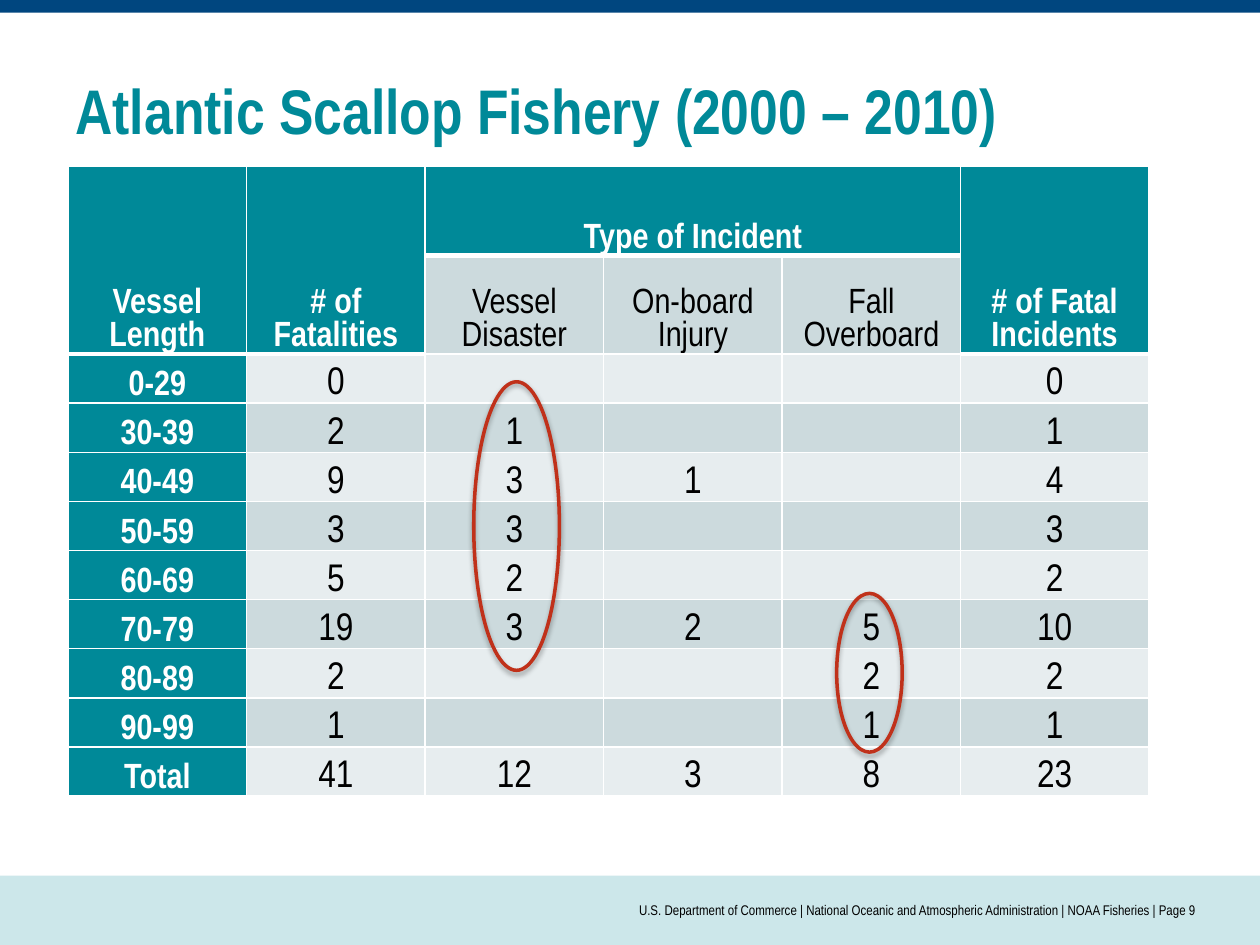
from lxml.etree import SubElement
from pptx import Presentation
from pptx.dml.color import RGBColor
from pptx.enum.shapes import MSO_SHAPE
from pptx.enum.text import MSO_ANCHOR, MSO_AUTO_SIZE, PP_ALIGN
from pptx.oxml.ns import qn
from pptx.util import Inches, Pt

COLORS = {
    "teal": "008998",
    "navy": "00467F",
    "footer": "CCE7EA",
    "dark_band": "CCDADD",
    "light_band": "E7EDEF",
    "white": "FFFFFF",
    "black": "000000",
    "red": "C0311A",
}
FONT = "Arial Narrow"
GRID_COLUMNS, GRID_ROWS = 100, 75

HEADERS = [
    ["Vessel Length", "# of Fatalities", "Type of Incident", "", "", "# of Fatal Incidents"],
    ["", "", "Vessel Disaster", "On-board Injury", "Fall Overboard", ""],
]
RECORDS = [
    ["0-29", "0", "", "", "", "0"],
    ["30-39", "2", "1", "", "", "1"],
    ["40-49", "9", "3", "1", "", "4"],
    ["50-59", "3", "3", "", "", "3"],
    ["60-69", "5", "2", "", "", "2"],
    ["70-79", "19", "3", "2", "5", "10"],
    ["80-89", "2", "", "", "2", "2"],
    ["90-99", "1", "", "", "1", "1"],
    ["Total", "41", "12", "3", "8", "23"],
]
TALL_HEADERS = (0, 1, 5)
FOOTER = " | ".join([
    "U.S. Department of Commerce",
    "National Oceanic and Atmospheric Administration",
    "NOAA Fisheries",
    "Page 9",
])


def color(name):
    return RGBColor.from_string(COLORS[name])


class SlideBuilder:
    def __init__(self, presentation):
        self.column = presentation.slide_width / GRID_COLUMNS
        self.row = presentation.slide_height / GRID_ROWS
        self.slide = presentation.slides.add_slide(presentation.slide_layouts[5])

    def area(self, left, top, width, height):
        return (round(left * self.column), round(top * self.row),
                round(width * self.column), round(height * self.row))

    def set_text(self, text_frame, text, size, color_name, bold=False, align=PP_ALIGN.LEFT):
        text_frame.text = text
        text_frame.word_wrap = True
        for paragraph in text_frame.paragraphs:
            paragraph.alignment = align
            for run in paragraph.runs:
                run.font.name = FONT
                run.font.size = Pt(size)
                run.font.bold = bold
                run.font.color.rgb = color(color_name)

    def title(self, text, *area):
        title = self.slide.shapes.title
        title.left, title.top, title.width, title.height = self.area(*area)
        self.set_text(title.text_frame, text, 36, "teal", bold=True)
        title.text_frame.vertical_anchor = MSO_ANCHOR.MIDDLE
        title.text_frame.auto_size = MSO_AUTO_SIZE.NONE

    def bar(self, fill, *area):
        bar = self.slide.shapes.add_shape(MSO_SHAPE.RECTANGLE, *self.area(*area))
        bar.shadow.inherit = False
        bar.fill.solid()
        bar.fill.fore_color.rgb = color(fill)
        bar.line.fill.background()

    def footer(self, text, *area):
        text_frame = self.slide.shapes.add_textbox(*self.area(*area)).text_frame
        self.set_text(text_frame, text, 8, "black", align=PP_ALIGN.RIGHT)
        text_frame.vertical_anchor = MSO_ANCHOR.MIDDLE
        text_frame.margin_left = text_frame.margin_right = 0

    def highlight(self, *area):
        ellipse = self.slide.shapes.add_shape(MSO_SHAPE.OVAL, *self.area(*area))
        ellipse.fill.background()
        ellipse.line.color.rgb = color("red")
        ellipse.line.width = Pt(2)
        ellipse.shadow.inherit = False
        effects = ellipse.element.spPr.find(qn("a:effectLst"))
        shadow = SubElement(effects, qn("a:outerShdw"), blurRad=str(Pt(3.1)),
                            dist=str(Pt(1.8)), dir="5400000", rotWithShape="0")
        shade = SubElement(shadow, qn("a:srgbClr"), val=COLORS["black"])
        SubElement(shade, qn("a:alpha"), val="35000")

    def borders(self, cell, widths):
        properties = cell._tc.get_or_add_tcPr()
        for side, width in widths.items():
            line = SubElement(properties, qn(f"a:ln{side}"), w=str(Pt(width)))
            fill = SubElement(line, qn("a:solidFill"))
            SubElement(fill, qn("a:srgbClr"), val=COLORS["white"])

    def cell(self, cell, text, fill, size, color_name, bold, widths):
        self.borders(cell, widths)
        cell.fill.solid()
        cell.fill.fore_color.rgb = color(fill)
        cell.margin_left = cell.margin_right = Inches(0.07)
        cell.margin_top = cell.margin_bottom = 0
        cell.vertical_anchor = MSO_ANCHOR.BOTTOM
        self.set_text(cell.text_frame, text, size, color_name, bold, PP_ALIGN.CENTER)

    def table(self, rows, column_widths, row_heights, left, top):
        area = self.area(left, top, sum(column_widths), sum(row_heights))
        table = self.slide.shapes.add_table(len(rows), len(column_widths), *area).table
        for column, width in zip(table.columns, column_widths):
            column.width = round(width * self.column)
        for row, height in zip(table.rows, row_heights):
            row.height = round(height * self.row)
        for index in TALL_HEADERS:
            table.cell(0, index).merge(table.cell(1, index))
        table.cell(0, 2).merge(table.cell(0, 4))

        def rule_below(row, column):
            return 3 if row == 0 or (row == 1 and column in TALL_HEADERS) else 1

        for row, values in enumerate(rows):
            band = "light_band" if row % 2 == 0 else "dark_band"
            for column, text in enumerate(values):
                heading = row == 0 or column == 0 or (row == 1 and column in TALL_HEADERS)
                self.cell(
                    table.cell(row, column), text,
                    fill="teal" if heading else band,
                    size=20 if heading or row == 1 else 22,
                    color_name="white" if heading else "black",
                    bold=heading,
                    widths={"L": 1, "R": 1,
                            "T": rule_below(row - 1, column),
                            "B": rule_below(row, column)},
                )


def main():
    presentation = Presentation()
    presentation.slide_width, presentation.slide_height = Inches(10), Inches(7.5)
    builder = SlideBuilder(presentation)
    builder.bar("footer", 0, 69.5, 100, 5.5)
    builder.bar("navy", 0, 0, 100, 1)
    builder.title("Atlantic Scallop Fishery (2000 – 2010)", 5, 5, 90, 7.4)
    builder.table(HEADERS + RECORDS, [14.17] * 5 + [14.9],
                  [7.1, 7.8] + [3.9] * len(RECORDS), 5.4, 13.2)
    builder.footer(FOOTER, 25, 69.5, 70, 5.5)
    builder.highlight(66.4, 47.1, 5.2, 12.6)
    builder.highlight(37.6, 30.3, 6.8, 22.9)
    presentation.save("out.pptx")


if __name__ == "__main__":
    main()
